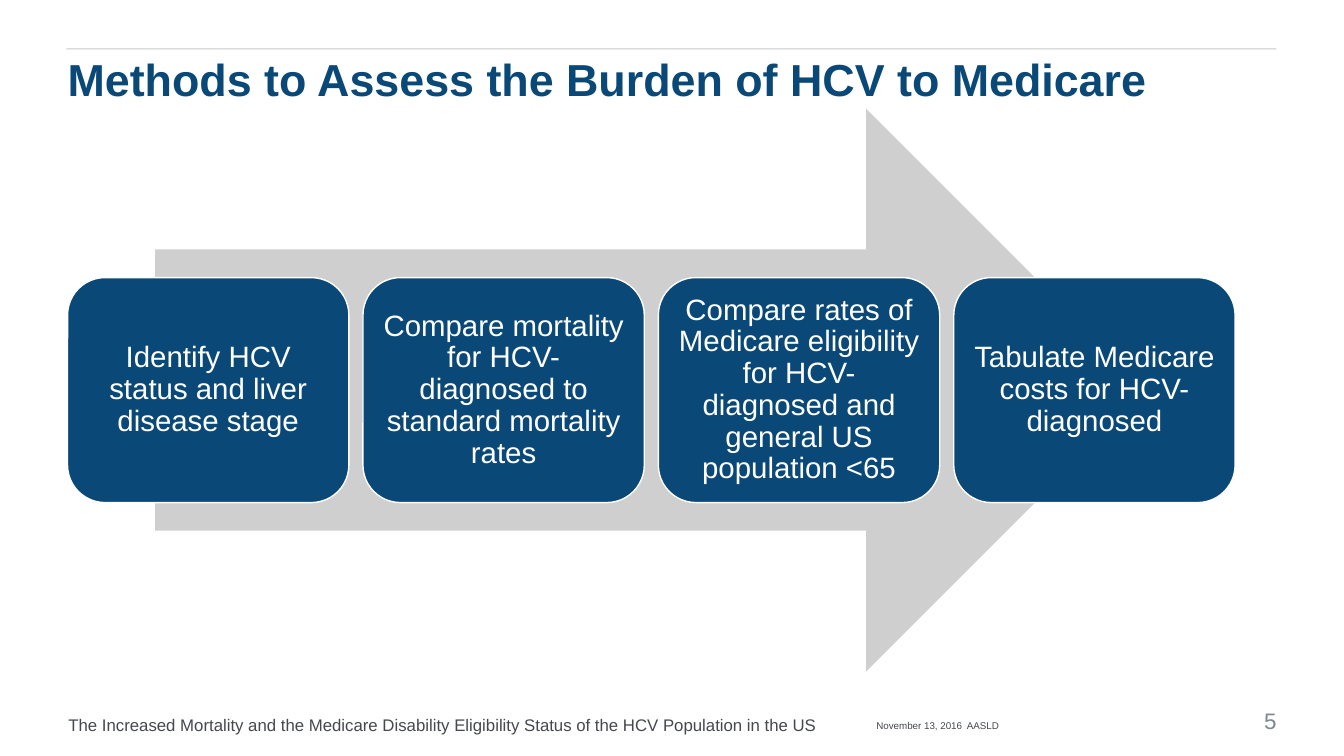
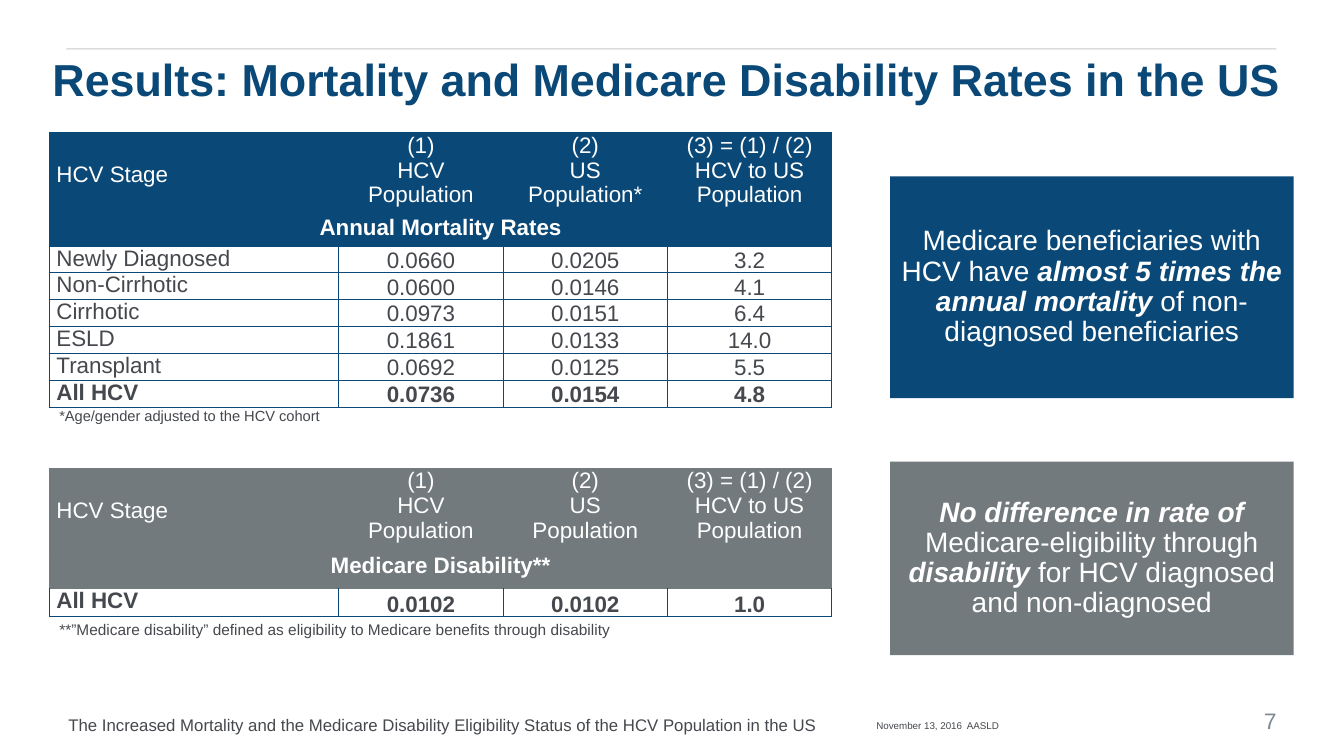
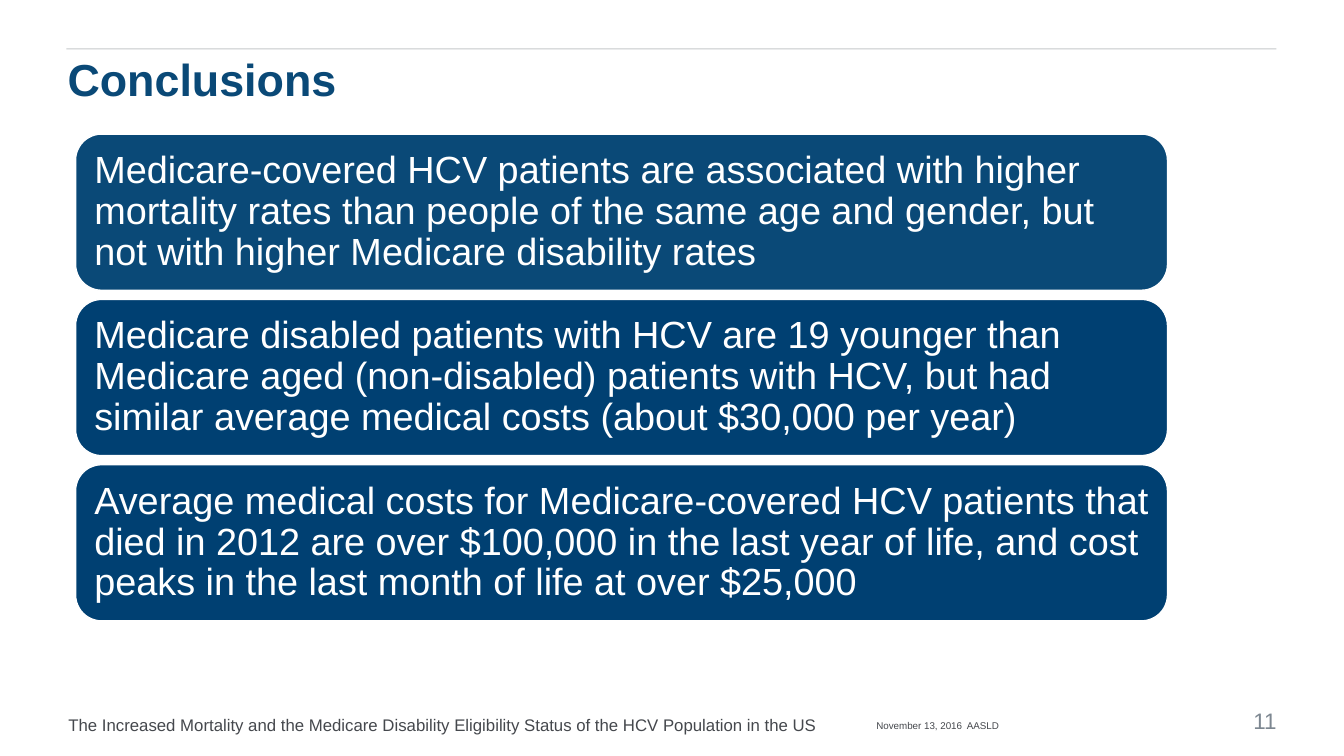
from lxml.etree import SubElement
from pptx import Presentation
from pptx.dml.color import RGBColor
from pptx.enum.shapes import MSO_SHAPE
from pptx.enum.text import MSO_ANCHOR, PP_ALIGN
from pptx.oxml.ns import qn
from pptx.util import Inches, Pt

FONT = "Arial"
COLORS = {
    "navy": "0A4977",
    "deep": "004072",
    "gray": "727A7D",
    "ink": "45484D",
    "number": "7D8791",
    "rule": "C6C9CA",
    "arrow": "CFCFD0",
    "white": "FFFFFF",
}
FOOTER = ("The Increased Mortality and the Medicare Disability Eligibility Status "
          "of the HCV Population in the US")
EVENT = "November 13, 2016  AASLD"

STEPS = [
    "Identify HCV status and liver disease stage",
    "Compare mortality for HCV-diagnosed to standard mortality rates",
    "Compare rates of Medicare eligibility for HCV-diagnosed and general US population <65",
    "Tabulate Medicare costs for HCV-diagnosed",
]
MORTALITY_ROWS = [
    ("Newly Diagnosed", "0.0660", "0.0205", "3.2"),
    ("Non-Cirrhotic", "0.0600", "0.0146", "4.1"),
    ("Cirrhotic", "0.0973", "0.0151", "6.4"),
    ("ESLD", "0.1861", "0.0133", "14.0"),
    ("Transplant", "0.0692", "0.0125", "5.5"),
    ("All HCV", "0.0736", "0.0154", "4.8"),
]
DISABILITY_ROWS = [("All HCV", "0.0102", "0.0102", "1.0")]
MORTALITY_NOTE = [
    ("Medicare beneficiaries with HCV have ", False),
    ("almost 5 times the annual mortality", True),
    (" of non-diagnosed beneficiaries", False),
]
DISABILITY_NOTE = [
    ("No difference in rate of ", True),
    ("Medicare-eligibility through ", False),
    ("disability ", True),
    ("for HCV diagnosed and non-diagnosed", False),
]
CONCLUSIONS = [
    ("Medicare-covered HCV patients are associated with higher mortality rates than people "
     "of the same age and gender, but not with higher Medicare disability rates", "navy"),
    ("Medicare disabled patients with HCV are 19 younger than Medicare aged (non-disabled) "
     "patients with HCV, but had similar average medical costs (about $30,000 per year)", "deep"),
    ("Average medical costs for Medicare-covered HCV patients that died in 2012 are over "
     "$100,000 in the last year of life, and cost peaks in the last month of life "
     "at over $25,000", "deep"),
]


def rgb(name):
    """Return the named colour."""
    return RGBColor.from_string(COLORS[name])


def style(p, size, color, bold=None, align=PP_ALIGN.LEFT, spacing=None):
    """Set the font and layout of a paragraph."""
    p.font.name, p.font.size, p.font.bold = FONT, Pt(size), bold
    p.font.color.rgb = rgb(color)
    p.alignment, p.line_spacing = align, spacing


def set_frame(tf, inset, anchor):
    """Make a text frame wrap, with equal insets."""
    tf.word_wrap, tf.vertical_anchor = True, anchor
    tf.margin_left = tf.margin_right = tf.margin_top = tf.margin_bottom = Inches(inset)


def add_text(s, box, text, size, color, inset=0, anchor=MSO_ANCHOR.TOP, **kw):
    """Add a text box of one paragraph."""
    tf = s.shapes.add_textbox(*map(Inches, box)).text_frame
    set_frame(tf, inset, anchor)
    tf.text = text
    style(tf.paragraphs[0], size, color, **kw)


def add_block(s, kind, box, fill, line=None):
    """Add a flat filled shape."""
    sp = s.shapes.add_shape(kind, *map(Inches, box))
    sp.shadow.inherit = False
    sp.fill.solid()
    sp.fill.fore_color.rgb = rgb(fill)
    if line:
        sp.line.color.rgb, sp.line.width = rgb(line), Pt(1)
    else:
        sp.line.fill.background()
    return sp


def add_card(s, box, text, size, fill, inset, align):
    """Add a rounded box with white text."""
    sp = add_block(s, MSO_SHAPE.ROUNDED_RECTANGLE, box, fill, "white")
    tf = sp.text_frame
    set_frame(tf, inset, MSO_ANCHOR.MIDDLE)
    tf.text = text
    style(tf.paragraphs[0], size, "white", align=align, spacing=0.9)


def add_callout(s, box, runs, fill):
    """Add a box whose text has emphasised runs."""
    tf = add_block(s, MSO_SHAPE.RECTANGLE, box, fill).text_frame
    set_frame(tf, 0, MSO_ANCHOR.MIDDLE)
    p = tf.paragraphs[0]
    style(p, 20, "white", align=PP_ALIGN.CENTER, spacing=0.9)
    for text, strong in runs:
        r = p.add_run()
        r.text = text
        r.font.bold = r.font.italic = strong


def set_borders(cell, top, other):
    """Draw the four borders of a cell."""
    tcPr = cell._tc.get_or_add_tcPr()
    colors = {"a:lnL": other, "a:lnR": other, "a:lnT": top, "a:lnB": other}
    for i, (tag, color) in enumerate(colors.items()):
        ln = SubElement(tcPr, qn(tag), w=str(Pt(1)))
        fill = SubElement(ln, qn("a:solidFill"))
        SubElement(fill, qn("a:srgbClr"), val=COLORS[color])
        tcPr.insert(i, ln)


def fill_cell(cell, text, fill, color, top, border, bold, align, anchor):
    """Write and style a table cell."""
    cell.text = text
    cell.margin_left = cell.margin_right = Inches(0.07)
    cell.margin_top = cell.margin_bottom = 0
    cell.vertical_anchor = anchor
    cell.fill.solid()
    cell.fill.fore_color.rgb = rgb(fill)
    for p in cell.text_frame.paragraphs:
        style(p, 16, color, bold, align)
    set_borders(cell, top, border)


def add_rates(s, left, top, heading, us_label, rows, heights, accent):
    """Add a table of rates with a two-row header."""
    head = ("HCV Stage", "(1)\nHCV\nPopulation", f"(2)\nUS\n{us_label}",
            "(3) = (1) / (2)\nHCV to US Population")
    grid = [head, (heading, "", "", ""), *rows]
    widths = (2.87, 1.63, 1.63, 1.63)
    frame = s.shapes.add_table(len(grid), len(widths), Inches(left), Inches(top),
                               Inches(sum(widths)), Inches(sum(heights)))
    table = frame.table
    table.first_row = table.horz_banding = False
    for col, width in zip(table.columns, widths):
        col.width = Inches(width)
    for row, height in zip(table.rows, heights):
        row.height = Inches(height)
    for i, values in enumerate(grid):
        for j, text in enumerate(values):
            header = i < 2
            centred = j > 0 or i == 1
            if i == 0 and j == 0:
                anchor = MSO_ANCHOR.MIDDLE
            else:
                anchor = MSO_ANCHOR.TOP if header or j == 0 else MSO_ANCHOR.BOTTOM
            fill_cell(table.cell(i, j), text,
                      fill=accent if header else "white",
                      color="white" if header else "ink",
                      top=accent if i < 3 else "navy",
                      border=accent if header else "navy",
                      bold=i == 1 or values[0] == "All HCV",
                      align=PP_ALIGN.CENTER if centred else PP_ALIGN.LEFT,
                      anchor=anchor)
    table.cell(1, 0).merge(table.cell(1, len(widths) - 1))


def add_base(prs, title, number, title_box=(0.67, 0.57, 12, 0.93)):
    """Add a slide with its rule, title and footer."""
    s = prs.slides.add_slide(prs.slide_layouts[6])
    add_block(s, MSO_SHAPE.RECTANGLE, (0.66, 0.48, 12, 0.01), "rule")
    add_text(s, title_box, title, 32, "navy", bold=True, spacing=0.9)
    add_text(s, (0.58, 7.04, 8.01, 0.3), FOOTER, 12, "ink", inset=0.1,
             anchor=MSO_ANCHOR.MIDDLE)
    add_text(s, (8.6, 7.03, 1.4, 0.23), EVENT, 7, "ink",
             anchor=MSO_ANCHOR.BOTTOM, align=PP_ALIGN.CENTER)
    add_text(s, (12.08, 7.03, 0.58, 0.25), str(number), 16, "number",
             anchor=MSO_ANCHOR.BOTTOM, align=PP_ALIGN.RIGHT)
    return s


def add_process(s, left, top, width, height):
    """Add the steps in a row over a wide arrow."""
    add_block(s, MSO_SHAPE.RIGHT_ARROW,
              (left + 0.075 * width, top, 0.85 * width, height), "arrow")
    gap, card_height = 0.14, 0.4 * height
    card_width = (width - gap * (len(STEPS) - 1)) / len(STEPS)
    for i, text in enumerate(STEPS):
        box = (left + i * (card_width + gap), top + 0.3 * height, card_width, card_height)
        add_card(s, box, text, 21, "navy", 0.09, PP_ALIGN.CENTER)


def add_conclusions(s, left, top, width, height):
    """Stack the conclusions with equal gaps."""
    gap = 0.09
    card_height = (height - gap * (len(CONCLUSIONS) - 1)) / len(CONCLUSIONS)
    for i, (text, fill) in enumerate(CONCLUSIONS):
        box = (left, top + i * (card_height + gap), width, card_height)
        add_card(s, box, text, 27, fill, 0.11, PP_ALIGN.LEFT)


def add_results(s, left, right):
    """Add the two tables, their notes and their callouts."""
    add_rates(s, left, 1.32, "Annual Mortality Rates", "Population*", MORTALITY_ROWS,
              [0.82, 0.3] + [0.25] * len(MORTALITY_ROWS), "navy")
    add_rates(s, left, 4.65, "Medicare Disability**", "Population", DISABILITY_ROWS,
              [0.84, 0.35, 0.28], "gray")
    add_text(s, (left, 3.98, 3.5, 0.28), "*Age/gender adjusted to the HCV cohort",
             10.5, "ink", inset=0.1, anchor=MSO_ANCHOR.MIDDLE)
    add_text(s, (left, 6.1, 6.67, 0.29),
             "**”Medicare disability” defined as eligibility to Medicare benefits "
             "through disability", 11, "ink", inset=0.1, anchor=MSO_ANCHOR.MIDDLE)
    add_callout(s, (right, 1.75, 4, 2.2), MORTALITY_NOTE, "navy")
    add_callout(s, (right, 4.58, 4, 1.92), DISABILITY_NOTE, "gray")


def main():
    """Build the three slides."""
    prs = Presentation()
    prs.slide_width, prs.slide_height = Inches(13.33), Inches(7.5)
    s = add_base(prs, "Methods to Assess the Burden of HCV to Medicare", 5)
    add_process(s, 0.67, 1.08, 11.58, 5.58)
    s = add_base(prs, "Results: Mortality and Medicare Disability Rates in the US", 7,
                 (0.52, 0.57, 12.31, 0.93))
    add_results(s, 0.49, 8.83)
    s = add_base(prs, "Conclusions", 11)
    add_conclusions(s, 0.75, 1.33, 10.83, 4.83)
    prs.save("out.pptx")


if __name__ == "__main__":
    main()
